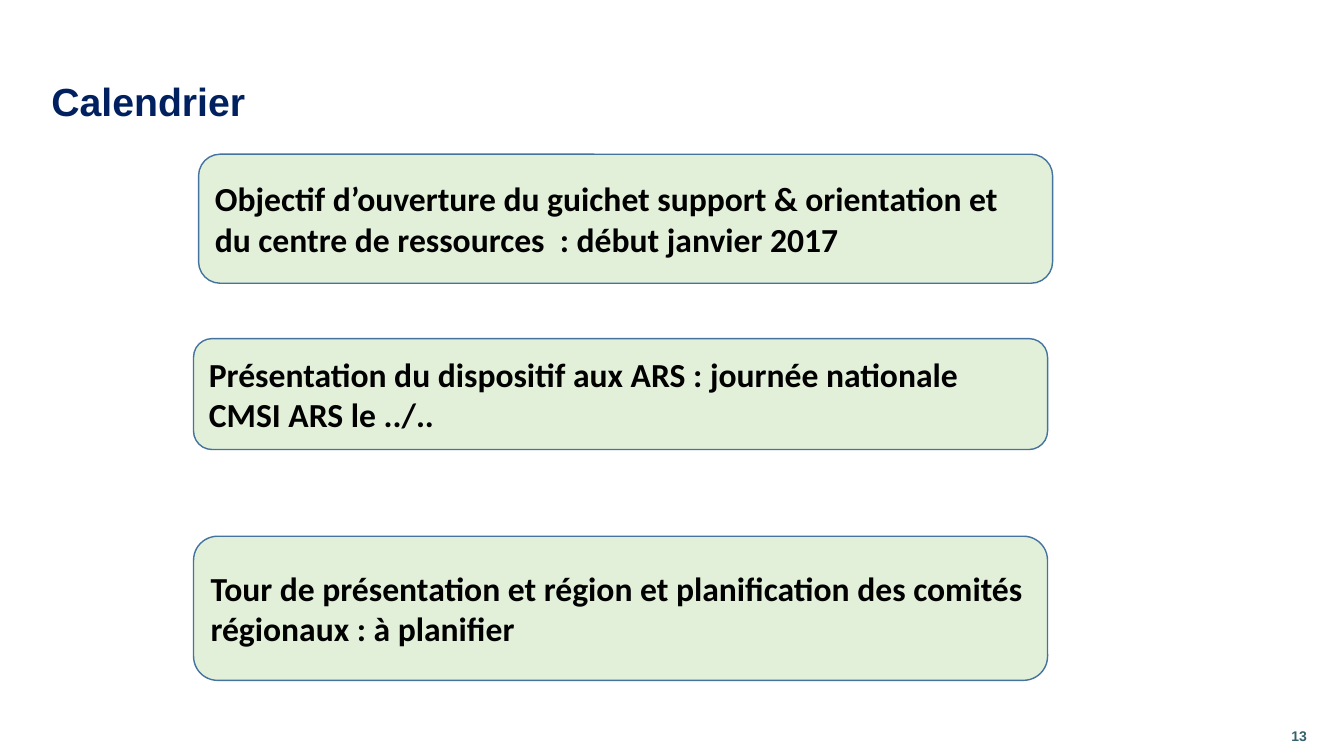
from pptx import Presentation
from pptx.dml.color import RGBColor
from pptx.enum.shapes import MSO_SHAPE
from pptx.enum.text import MSO_ANCHOR, PP_ALIGN
from pptx.util import Inches, Pt

COLORS = {
    "title": "002060",
    "number": "36616C",
    "text": "000000",
    "fill": "E2F0D9",
    "line": "43739E",
}

STEP_LEFT, STEP_WIDTH = 1.92, 8.47
STEPS = [  # left, top, height, text
    (STEP_LEFT + 0.05, 1.53, 1.28,
     "Objectif d’ouverture du guichet support & orientation et "
     "du centre de ressources  : début janvier 2017"),
    (STEP_LEFT, 3.36, 1.1,
     "Présentation du dispositif aux ARS : journée nationale CMSI ARS le ../.."),
    (STEP_LEFT, 5.32, 1.43,
     "Tour de présentation et région et planification des comités "
     "régionaux : à planifier"),
]


class SlideBuilder:
    def __init__(self, prs):
        self.slide = prs.slides.add_slide(prs.slide_layouts[5])

    def color(self, name):
        return RGBColor.from_string(COLORS[name])

    def add_text(self, sp, text, size, font, color):
        """Fill a shape with one bold, left-aligned, vertically centred paragraph."""
        tf = sp.text_frame
        tf.word_wrap = True
        tf.vertical_anchor = MSO_ANCHOR.MIDDLE
        p = tf.paragraphs[0]
        p.alignment = PP_ALIGN.LEFT
        r = p.add_run()
        r.text = text
        r.font.size = Pt(size)
        r.font.name = font
        r.font.bold = True
        r.font.color.rgb = self.color(color)
        return p

    def title(self, text, left, top, width, height):
        sp = self.slide.shapes.title
        sp.left, sp.top = Inches(left), Inches(top)
        sp.width, sp.height = Inches(width), Inches(height)
        p = self.add_text(sp, text, 28, "Arial", "title")
        p.line_spacing = 0.9

    def page_number(self, text, left, top, width, height):
        sp = self.slide.shapes.add_textbox(
            Inches(left), Inches(top), Inches(width), Inches(height))
        self.add_text(sp, text, 10, "Arial", "number")

    def step(self, text, left, top, width, height):
        sp = self.slide.shapes.add_shape(
            MSO_SHAPE.ROUNDED_RECTANGLE,
            Inches(left), Inches(top), Inches(width), Inches(height))
        sp.shadow.inherit = False
        sp.fill.solid()
        sp.fill.fore_color.rgb = self.color("fill")
        sp.line.color.rgb = self.color("line")
        sp.line.width = Pt(1)
        self.add_text(sp, text, 24, "Calibri", "text")


def main():
    prs = Presentation()
    prs.slide_width, prs.slide_height = Inches(13.33), Inches(7.5)
    s = SlideBuilder(prs)
    s.page_number("13", 12.71, 7.1, 0.62, 0.4)
    s.title("Calendrier", 0.41, 0.78, 12.73, 0.49)
    for left, top, height, text in STEPS:
        s.step(text, left, top, STEP_WIDTH, height)
    prs.save("out.pptx")


if __name__ == "__main__":
    main()
